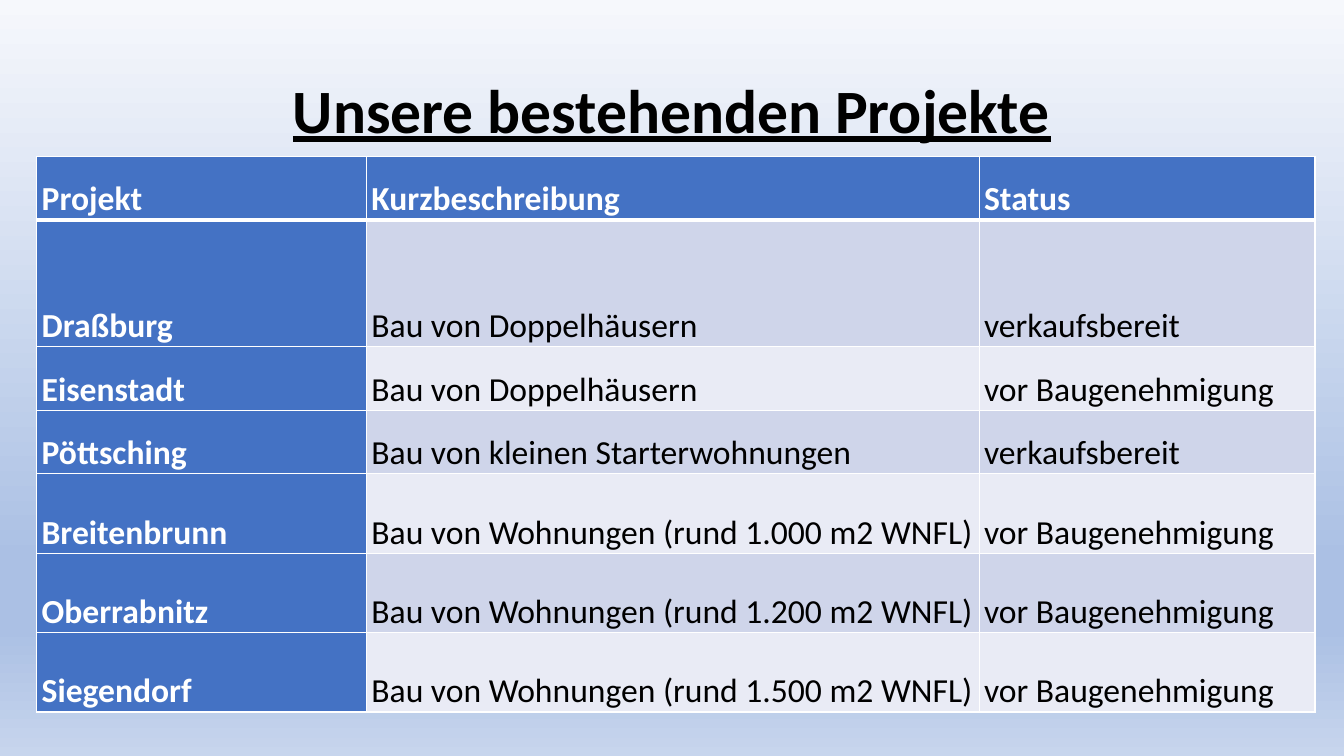
from lxml.etree import SubElement
from pptx import Presentation
from pptx.dml.color import RGBColor
from pptx.enum.text import MSO_ANCHOR as Anchor, PP_ALIGN as Align
from pptx.oxml.ns import qn
from pptx.util import Cm, Pt


def rgb(value):
    return RGBColor.from_string(value)


class Deck:
    """Holds the style and the current slide, and draws its elements."""

    font = "Calibri"
    dark, light, accent = "000000", "FFFFFF", "4472C4"
    bands = ("CFD5EA", "E9EBF5")

    def __init__(self, width, height):
        self.prs = Presentation()
        self.prs.slide_width, self.prs.slide_height = Cm(width), Cm(height)
        self.s = self.prs.slides.add_slide(self.prs.slide_layouts[6])

    def background(self, stops):
        fill = self.s.background.fill
        fill.gradient()
        fill.gradient_angle = 270
        gs_list = self.s.background._cSld.find(".//" + qn("a:gsLst"))
        gs_list.clear()
        for percent, color in stops:
            gs = SubElement(gs_list, qn("a:gs"), pos=str(percent * 1000))
            SubElement(gs, qn("a:srgbClr"), val=color)

    def run(self, p, text, size, color, bold, underline=None):
        r = p.add_run()
        r.text = text
        f = r.font
        f.name, f.size, f.bold, f.underline = self.font, Pt(size), bold, underline
        f.color.rgb = rgb(color)

    def title(self, text, left, top, width, height):
        tf = self.s.shapes.add_textbox(Cm(left), Cm(top), Cm(width), Cm(height)).text_frame
        tf.word_wrap = True
        tf.vertical_anchor = Anchor.MIDDLE
        p = tf.paragraphs[0]
        p.alignment, p.line_spacing = Align.CENTER, 0.9
        self.run(p, text, 44, self.dark, True, True)

    def borders(self, cell, header):
        tc_pr = cell._tc.get_or_add_tcPr()
        for side in "LRTB":
            width = Pt(3 if header and side == "B" else 1)
            ln = SubElement(tc_pr, qn("a:ln" + side), w=str(width))
            SubElement(SubElement(ln, qn("a:solidFill")), qn("a:srgbClr"), val=self.light)

    def cell(self, cell, text, row, col):
        strong = row == 0 or col == 0
        cell.margin_left = cell.margin_right = Cm(0.12)
        cell.margin_top = cell.margin_bottom = 0
        cell.vertical_anchor = Anchor.BOTTOM
        self.borders(cell, row == 0)
        cell.fill.solid()
        cell.fill.fore_color.rgb = rgb(self.accent if strong else self.bands[(row - 1) % 2])
        p = cell.text_frame.paragraphs[0]
        p.line_spacing, p.space_after = 1.07, Pt(8)
        self.run(p, text, 24, self.light if strong else self.dark, strong)

    def table(self, rows, left, top, widths, heights):
        table = self.s.shapes.add_table(len(rows), len(widths), Cm(left), Cm(top),
                                        Cm(sum(widths)), Cm(sum(heights))).table
        table.first_col = True
        for col, width in zip(table.columns, widths):
            col.width = Cm(width)
        for i, (row, height) in enumerate(zip(rows, heights)):
            table.rows[i].height = Cm(height)
            for j, text in enumerate(row):
                self.cell(table.cell(i, j), text, i, j)


def main():
    houses, flats = "Bau von Doppelhäusern", "Bau von Wohnungen (rund {} m2 WNFL)"
    ready, pending = "verkaufsbereit", "vor Baugenehmigung"
    projects = [
        ("Projekt", "Kurzbeschreibung", "Status"),
        ("Draßburg", houses, ready),
        ("Eisenstadt", houses, pending),
        ("Pöttsching", "Bau von kleinen Starterwohnungen", ready),
        ("Breitenbrunn", flats.format("1.000"), pending),
        ("Oberrabnitz", flats.format("1.200"), pending),
        ("Siegendorf", flats.format("1.500"), pending),
    ]
    deck = Deck(33.87, 19.05)
    deck.background([(0, "F6F8FC"), (74, "ABC0E4"), (83, "ABC0E4"), (100, "C7D5ED")])
    deck.title("Unsere bestehenden Projekte", 2.33, 1.01, 29.21, 3.68)
    deck.table(projects, 0.93, 3.94, [8.31, 15.44, 8.46], [1.6, 3.2, 1.6, 1.6, 2, 2, 2])
    deck.prs.save("out.pptx")


if __name__ == "__main__":
    main()
